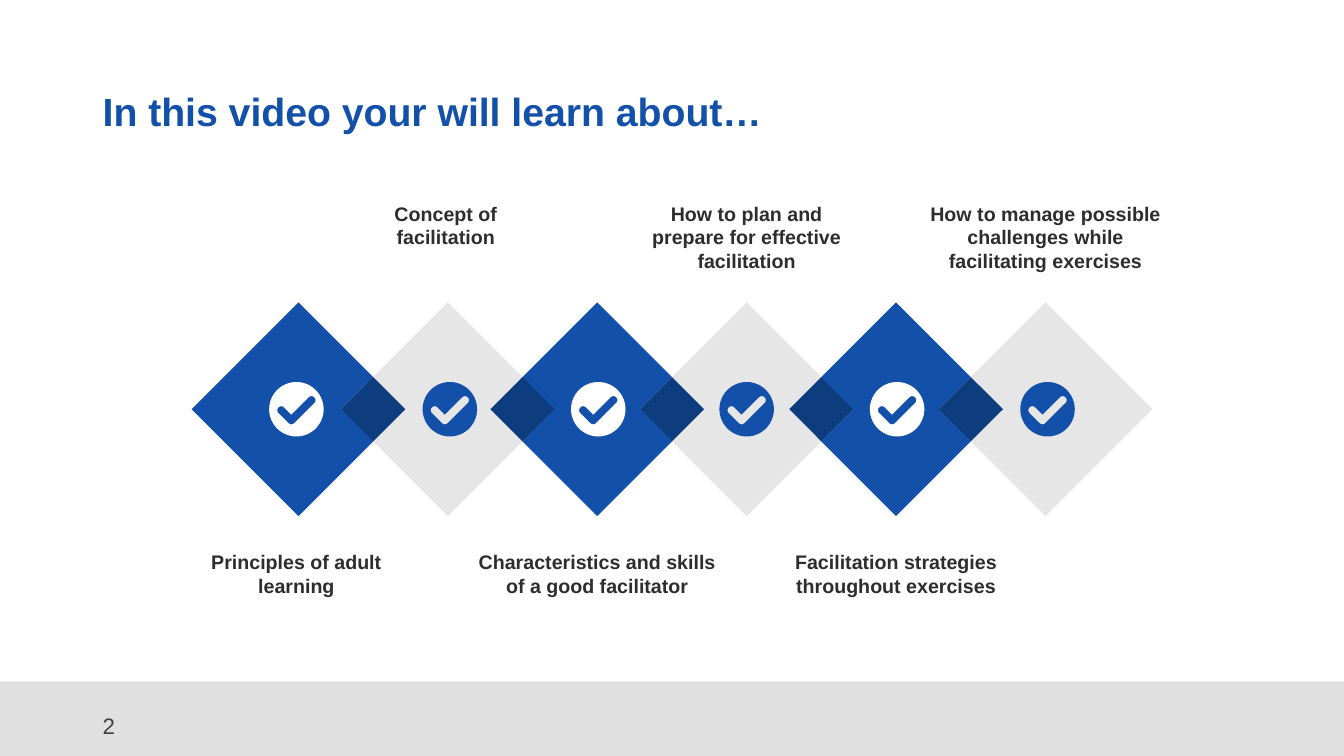
import math
from dataclasses import dataclass

import pptx
import pptx.dml.color
import pptx.enum.shapes
import pptx.enum.text
import pptx.util

# Content: label, label width, label shift, badge shift (inches)
TITLE = "In this video your will learn about…"
PAGE_NUMBER = "2"
TOPICS = [
    ("Principles of adult learning", 2.1, -0.02, -0.02),
    ("Concept of facilitation", 2.1, -0.02, 0.02),
    ("Characteristics and skills of a good facilitator", 2.64, 0, 0.01),
    ("How to plan and prepare for effective facilitation", 2.1, 0, 0),
    ("Facilitation strategies throughout exercises", 2.51, 0, 0.01),
    ("How to manage possible challenges while facilitating exercises", 2.51, 0, 0.02),
]
THREE_LINE_TOPICS = (3, 5)


@dataclass(frozen=True)
class Theme:
    font: str = "Arial"
    blue: str = "1250A9"
    navy: str = "0D3C7F"
    pale: str = "E7E6E6"
    white: str = "FFFFFF"
    band: str = "E0E0E0"
    ink: str = "2D2D2D"
    number: str = "424242"
    title_size: int = 28
    label_size: int = 14
    number_size: int = 16


THEME = Theme()

# Grid
WIDTH, HEIGHT = 13.33, 7.5
MARGIN = 0.92
BAND_TOP = 6.76
FIRST_X, LAST_X, CHAIN_Y = 2.96, 10.37, 4.06
PITCH = (LAST_X - FIRST_X) / (len(TOPICS) - 1)
RADIUS = 1.06
JOINT = PITCH / 2
OVERLAP = RADIUS - JOINT
BADGE_RADIUS = 0.27
LABEL_ABOVE, LABEL_BELOW = 1.95, 5.41
TWO_LINES, THREE_LINES = 0.57, 0.81


def paint(shape, color):
    shape.shadow.inherit = False
    shape.fill.solid()
    shape.fill.fore_color.rgb = pptx.dml.color.RGBColor.from_string(color)
    shape.line.fill.background()


def add_outline(page, center_x, contours, color):
    """Draw closed contours, given around a centre on the chain's axis."""
    placed = [
        [(pptx.util.Inches(center_x + x), pptx.util.Inches(CHAIN_Y + y)) for x, y in contour]
        for contour in contours
    ]
    builder = page.shapes.build_freeform(*placed[0][0])
    builder.add_line_segments(placed[0][1:], close=True)
    for contour in placed[1:]:
        builder.move_to(*contour[0])
        builder.add_line_segments(contour[1:], close=True)
    paint(builder.convert_to_shape(), color)


def add_text(page, text, area, size, color, bold=False, centered=False, middle=False):
    box = page.shapes.add_textbox(*map(pptx.util.Inches, area))
    frame = box.text_frame
    frame.word_wrap = True
    if middle:
        frame.vertical_anchor = pptx.enum.text.MSO_ANCHOR.MIDDLE
    para = frame.paragraphs[0]
    para.text = text
    if centered:
        para.alignment = pptx.enum.text.PP_ALIGN.CENTER
    para.font.name = THEME.font
    para.font.size = pptx.util.Pt(size)
    para.font.bold = bold
    para.font.color.rgb = pptx.dml.color.RGBColor.from_string(color)
    return para


def arc(center, radius, start, end, steps):
    angles = [math.radians(start + (end - start) * i / steps) for i in range(steps + 1)]
    return [(center[0] + radius * math.cos(a), center[1] + radius * math.sin(a)) for a in angles]


def diamond(radius):
    return [(0, -radius), (-radius, 0), (0, radius), (radius, 0)]


def link(is_first, is_last):
    """A diamond notched on each side where it meets a neighbour."""
    notch = [(JOINT, -OVERLAP), (JOINT - OVERLAP, 0), (JOINT, OVERLAP)]
    left_notch = [(-JOINT, -OVERLAP), (OVERLAP - JOINT, 0), (-JOINT, OVERLAP)]
    left = [(-RADIUS, 0)] if is_first else left_notch
    right = [(RADIUS, 0)] if is_last else notch[::-1]
    return [(0, -RADIUS)] + left + [(0, RADIUS)] + right


def badge():
    """A disc with a round-ended tick cut out of it."""
    corner, long_arm, short_arm, stroke = (-0.05, 0.11), 0.2, 0.1, 0.04
    long_end = (corner[0] + long_arm, corner[1] - long_arm)
    short_end = (corner[0] - short_arm, corner[1] - short_arm)
    tick = (
        arc(long_end, stroke, -135, 45, 12)
        + arc(corner, stroke, 45, 135, 6)
        + arc(short_end, stroke, 135, 315, 12)
        + [(corner[0], corner[1] - stroke * math.sqrt(2))]
    )
    return [arc((0, 0), BADGE_RADIUS, 0, 354, 59), tick]


def main():
    deck = pptx.Presentation()
    deck.slide_width = pptx.util.Inches(WIDTH)
    deck.slide_height = pptx.util.Inches(HEIGHT)
    page = deck.slides.add_slide(deck.slide_layouts[6])

    # Footer band, title and page number
    band_area = (0, BAND_TOP, WIDTH, HEIGHT - BAND_TOP)
    band = page.shapes.add_shape(
        pptx.enum.shapes.MSO_SHAPE.RECTANGLE, *map(pptx.util.Inches, band_area)
    )
    paint(band, THEME.band)
    title = add_text(page, TITLE, (MARGIN, 0.4, 11.5, 1.45), THEME.title_size,
                     THEME.blue, bold=True, middle=True)
    title.line_spacing = 0.9
    add_text(page, PAGE_NUMBER, (MARGIN, 7, 3, 0.4), THEME.number_size,
             THEME.number, middle=True)

    # Labels and chain of diamonds
    centers = [FIRST_X + PITCH * i for i in range(len(TOPICS))]
    for i, (label, width, shift, _) in enumerate(TOPICS):
        top = LABEL_ABOVE if i % 2 else LABEL_BELOW
        height = THREE_LINES if i in THREE_LINE_TOPICS else TWO_LINES
        add_text(page, label, (centers[i] + shift - width / 2, top, width, height),
                 THEME.label_size, THEME.ink, bold=True, centered=True)
        add_outline(page, centers[i], [link(i == 0, i == len(TOPICS) - 1)],
                    THEME.pale if i % 2 else THEME.blue)

    # Dark overlaps between neighbours
    for center in centers[:-1]:
        add_outline(page, center + JOINT, [diamond(OVERLAP)], THEME.navy)

    # Tick badges
    for i, (_, _, _, shift) in enumerate(TOPICS):
        add_outline(page, centers[i] + shift, badge(), THEME.blue if i % 2 else THEME.white)

    deck.save("out.pptx")


if __name__ == "__main__":
    main()
